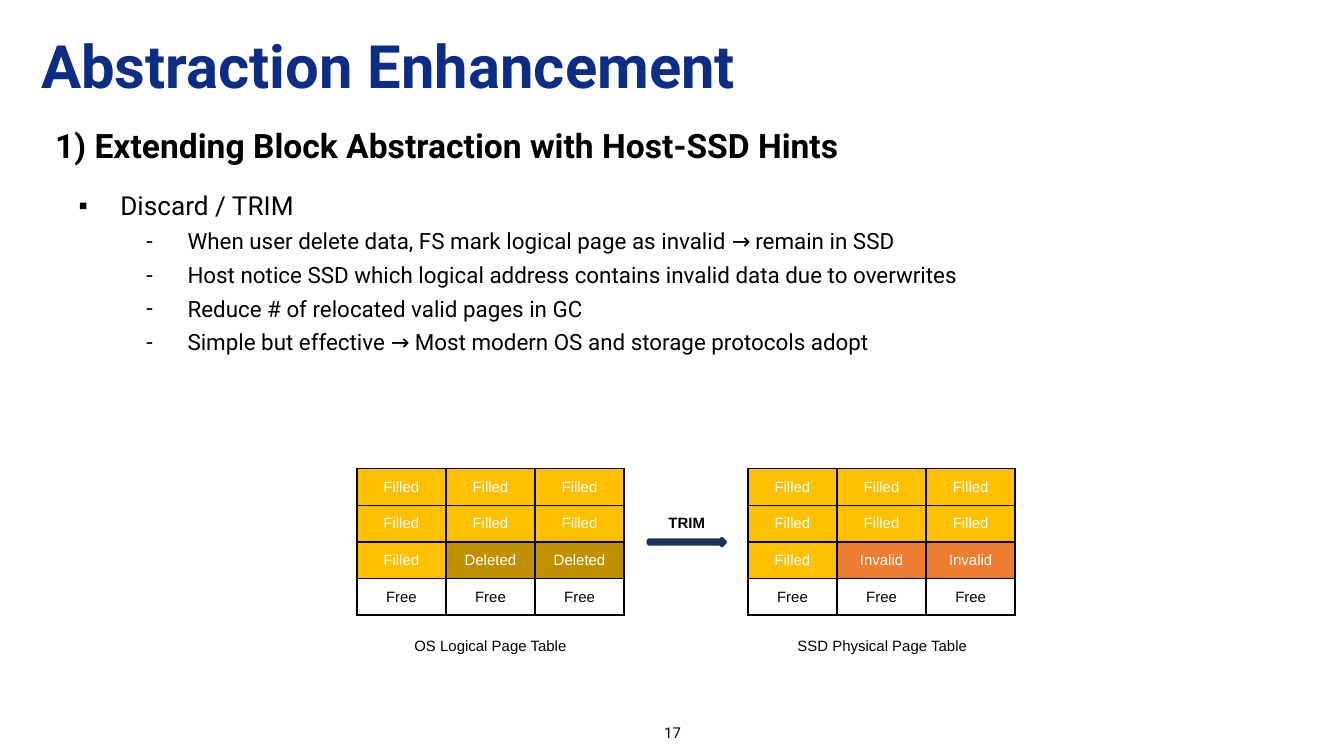
from lxml import etree
from pptx import Presentation
from pptx.dml.color import RGBColor
from pptx.enum.shapes import MSO_SHAPE
from pptx.enum.text import MSO_ANCHOR, MSO_AUTO_SIZE, PP_ALIGN
from pptx.oxml.ns import qn
from pptx.util import Inches, Pt

LEFT, MID = PP_ALIGN.LEFT, PP_ALIGN.CENTER
TOP, HALF = MSO_ANCHOR.TOP, MSO_ANCHOR.MIDDLE
FIXED = MSO_AUTO_SIZE.NONE
ARROW = MSO_SHAPE.RIGHT_ARROW

BLACK = RGBColor(0x00, 0x00, 0x00)
WHITE = RGBColor(0xFF, 0xFF, 0xFF)
BLUE = RGBColor(0x0B, 0x2D, 0x86)
NAVY = RGBColor(0x1E, 0x32, 0x56)
GOLD = RGBColor(0xFF, 0xC0, 0x00)
BROWN = RGBColor(0xBF, 0x90, 0x00)
ORANGE = RGBColor(0xED, 0x7D, 0x31)

# A 16:9 slide, cut into 100 columns and 100 rows
deck = Presentation()
deck.slide_width = Inches(10)
deck.slide_height = deck.slide_width * 9 // 16
COL, ROW = deck.slide_width / 100, deck.slide_height / 100
slide = deck.slides.add_slide(deck.slide_layouts[1])
shapes = slide.shapes


def write(para, text, size=8, font="Arial", color=BLACK, bold=False,
          align=MID, lead=1.0):
    para.alignment, para.line_spacing = align, lead
    para.space_before = Pt(0)
    run = para.add_run()
    run.text = text
    run.font.size, run.font.name, run.font.bold = Pt(size), font, bold
    run.font.color.rgb = color


def place(shape, x, y, w, h, anchor=HALF, wrap=True):
    """Put a shape on the grid and return its text frame."""
    shape.left, shape.top = int(x * COL), int(y * ROW)
    shape.width, shape.height = int(w * COL), int(h * ROW)
    frame = shape.text_frame
    frame.auto_size, frame.word_wrap = FIXED, wrap
    frame.vertical_anchor = anchor
    frame.margin_left = frame.margin_right = Inches(0.07)
    frame.margin_top = frame.margin_bottom = Inches(0.04)
    return frame


# Title
frame = place(shapes.title, 2.35, 3.1, 68.2, 12.1)
write(frame.paragraphs[0], "Abstraction Enhancement", size=32, font="Roboto",
      color=BLUE, bold=True, align=LEFT, lead=0.9)

# Bullet list
points = [
    (0, "Discard / TRIM"),
    (1, "When user delete data, FS mark logical page as invalid → remain in SSD"),
    (1, "Host notice SSD which logical address contains invalid data due to overwrites"),
    (1, "Reduce # of relocated valid pages in GC"),
    (1, "Simple but effective → Most modern OS and storage protocols adopt"),
]
frame = place(slide.placeholders[1], 3.55, 23.3, 92.9, 70.1, anchor=TOP)
for i, (level, text) in enumerate(points):
    para = frame.add_paragraph() if i else frame.paragraphs[0]
    para.level = level
    props = para._p.get_or_add_pPr()
    props.set("marL", str(Inches(0.47 + level * 0.5)))
    props.set("indent", str(Inches(-0.31)))
    tint = etree.SubElement(props, qn("a:buClr"))
    etree.SubElement(tint, qn("a:srgbClr"), val=str(BLACK))
    etree.SubElement(props, qn("a:buFont"), typeface="Arial")
    etree.SubElement(props, qn("a:buChar"), char="▪-"[level])
    write(para, text, size=14 - 2 * level, font="Roboto", align=LEFT, lead=1.25)

# Heading, page number and labels
labels = [
    ("1) Extending Block Abstraction with Host-SSD Hints", (3.4, 15.1, 93.1, 8.2),
     dict(size=18, font="Roboto", bold=True, align=LEFT)),
    ("17", (38.8, 94.8, 22.5, 4.3), dict(font="Roboto")),
    ("OS Logical Page Table", (29.7, 83.3, 13.6, 4.3), {}),
    ("TRIM", (48.7, 67, 4.8, 4.3), dict(bold=True)),
    ("SSD Physical Page Table", (58.2, 83.3, 14.9, 4.3), {}),
]
for text, box, look in labels:
    frame = place(shapes.add_textbox(0, 0, 0, 0), *box, wrap=len(text) > 30)
    write(frame.paragraphs[0], text, **look)

# Page tables: the last two pages of the third row differ
fills = {"Filled": GOLD, "Deleted": BROWN, "Invalid": ORANGE, "Free": WHITE}
for x, state in ((26.55, "Deleted"), (55.65, "Invalid")):
    rows = [["Filled"] * 3, ["Filled"] * 3, ["Filled", state, state], ["Free"] * 3]
    grid = shapes.add_table(4, 3, int(x * COL), int(62 * ROW),
                            int(19.9 * COL), int(19.4 * ROW)).table
    for r, names in enumerate(rows):
        for c, name in enumerate(names):
            cell = grid.cell(r, c)
            cell.vertical_anchor = HALF
            write(cell.text_frame.paragraphs[0], name,
                  color=BLACK if name == "Free" else WHITE)
            props = cell._tc.get_or_add_tcPr()
            for side in ("a:lnL", "a:lnR", "a:lnT", "a:lnB"):
                edge = etree.SubElement(props, qn(side), w=str(Pt(1)))
                paint = etree.SubElement(edge, qn("a:solidFill"))
                etree.SubElement(paint, qn("a:srgbClr"), val=str(BLACK))
            cell.fill.solid()
            cell.fill.fore_color.rgb = fills[name]

# Arrow between the tables
arrow = shapes.add_shape(ARROW, int(48.25 * COL), int(71.25 * ROW),
                         int(5.7 * COL), int(0.9 * ROW))
arrow.shadow.inherit = False
arrow.fill.solid()
arrow.fill.fore_color.rgb = NAVY
arrow.line.color.rgb = NAVY
arrow.line.width = Pt(2)

deck.save("out.pptx")
